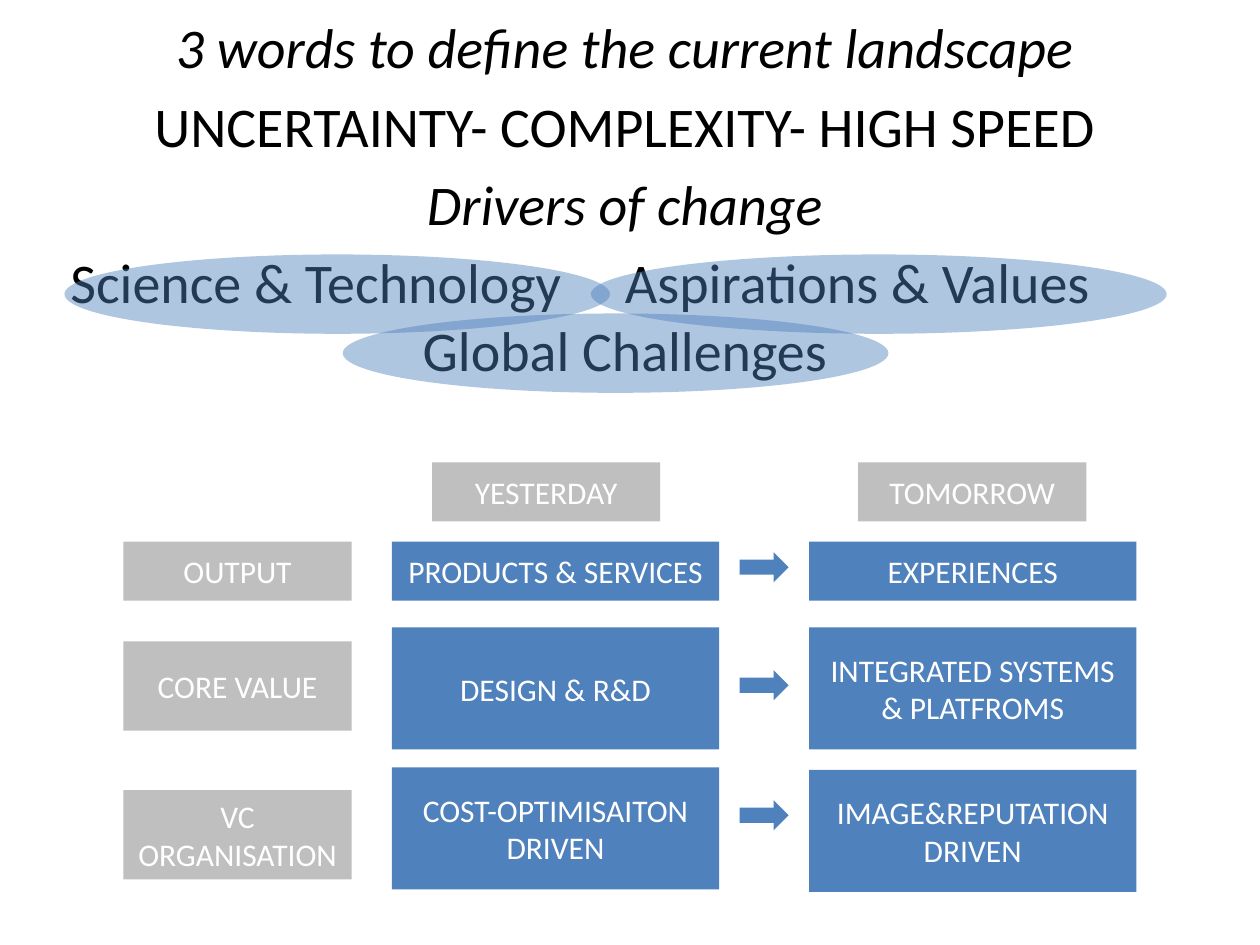
from lxml.etree import SubElement
from pptx import Presentation
from pptx.dml.color import RGBColor
from pptx.enum.shapes import MSO_SHAPE
from pptx.enum.text import MSO_ANCHOR, PP_ALIGN
from pptx.oxml.ns import qn
from pptx.util import Cm, Pt

COLORS = {"blue": "4F81BD", "grey": "BFBFBF", "white": "FFFFFF", "black": "000000"}

prs = Presentation()
prs.slide_width, prs.slide_height = Cm(25.4), Cm(19.05)
s = prs.slides.add_slide(prs.slide_layouts[6])


def write(p, text, size=18, color="white", italic=False, align=PP_ALIGN.CENTER, before=0):
    p.alignment = align
    p.space_before = Pt(before)
    r = p.add_run()
    r.text = text
    r.font.name = "Calibri"
    r.font.size = Pt(size)
    r.font.italic = italic
    r.font.color.rgb = RGBColor.from_string(COLORS[color])


def add_box(kind, left, top, width, height, color="blue", text=None):
    sp = s.shapes.add_shape(kind, Cm(left), Cm(top), Cm(width), Cm(height))
    sp.shadow.inherit = False
    sp.fill.solid()
    sp.fill.fore_color.rgb = RGBColor.from_string(COLORS[color])
    sp.line.fill.background()
    if text:
        tf = sp.text_frame
        tf.word_wrap = True
        tf.vertical_anchor = MSO_ANCHOR.MIDDLE
        write(tf.paragraphs[0], text)
    return sp


tf = s.shapes.add_textbox(Cm(1.17), Cm(0.13), Cm(22.86), Cm(12.57)).text_frame
tf.word_wrap = True
intro = [
    ("3 words to define the current landscape", True, PP_ALIGN.CENTER, 0),
    ("UNCERTAINTY- COMPLEXITY- HIGH SPEED", False, PP_ALIGN.CENTER, 6.4),
    ("Drivers of change", True, PP_ALIGN.CENTER, 6.4),
    ("Science & Technology\tAspirations & Values", False, PP_ALIGN.LEFT, 6.4),
    ("Global Challenges", False, PP_ALIGN.CENTER, 0),
]
for i, (text, italic, align, before) in enumerate(intro):
    p = tf.add_paragraph() if i else tf.paragraphs[0]
    if "\t" in text:
        tabs = SubElement(p._p.get_or_add_pPr(), qn("a:tabLst"))
        SubElement(tabs, qn("a:tab"), pos=str(Cm(11.18)), algn="l")
    write(p, text, size=32, color="black", italic=italic, align=align, before=before)

for left, top, width in [(1.3, 5.13, 11), (11.91, 5.13, 11.61), (6.91, 6.32, 11)]:
    sp = add_box(MSO_SHAPE.OVAL, left, top, width, 1.6)
    clr = sp.fill._xPr.find(qn("a:solidFill"))[0]
    SubElement(clr, qn("a:alpha"), val="45000")

for left, text in [(8.71, "YESTERDAY"), (17.3, "TOMORROW")]:
    add_box(MSO_SHAPE.RECTANGLE, left, 9.32, 4.6, 1.19, "grey", text)

rows = [
    (("OUTPUT", 10.92, 1.19), ("PRODUCTS & SERVICES", 10.92),
     ("EXPERIENCES", 10.92), 1.19, 11.13),
    (("CORE VALUE", 12.93, 1.8), ("DESIGN & R&D", 12.65),
     ("INTEGRATED SYSTEMS & PLATFROMS", 12.65), 2.46, 13.51),
    (("VC ORGANISATION", 15.93, 1.8), ("COST-OPTIMISAITON DRIVEN", 15.47),
     ("IMAGE&REPUTATION DRIVEN", 15.52), 2.46, 16.13),
]
for (label, label_top, label_height), yesterday, tomorrow, height, arrow_top in rows:
    add_box(MSO_SHAPE.RECTANGLE, 2.49, label_top, 4.6, label_height, "grey", label)
    for left, (text, top) in [(7.9, yesterday), (16.31, tomorrow)]:
        add_box(MSO_SHAPE.RECTANGLE, left, top, 6.6, height, "blue", text)
    add_box(MSO_SHAPE.RIGHT_ARROW, 14.91, arrow_top, 0.99, 0.61)

prs.save("out.pptx")
